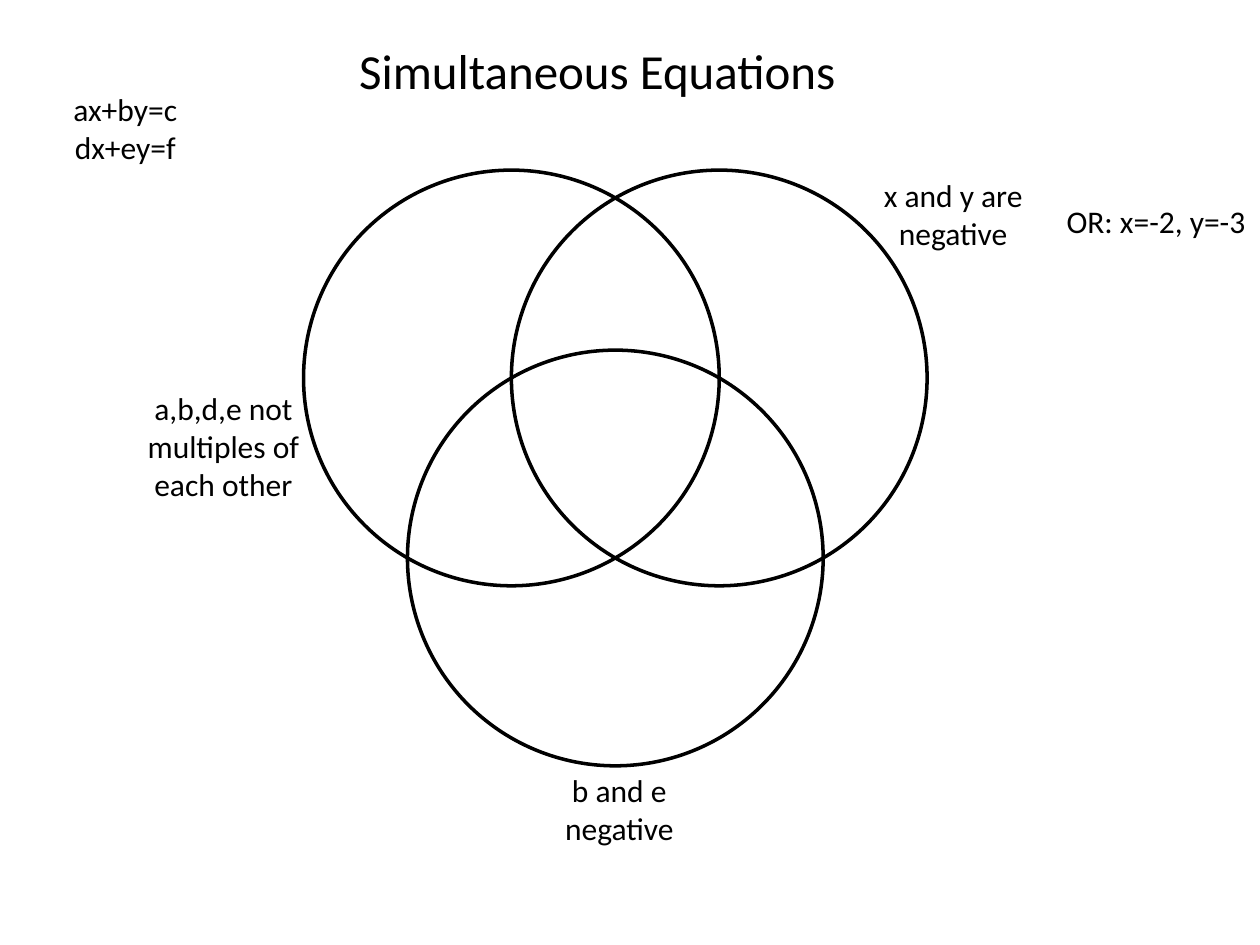
from dataclasses import dataclass
from math import sqrt

from pptx import Presentation
from pptx.dml.color import RGBColor
from pptx.enum.shapes import MSO_SHAPE as Shape
from pptx.enum.text import MSO_AUTO_SIZE as AutoSize, PP_ALIGN as Align
from pptx.util import Cm, Pt


@dataclass(frozen=True)
class Theme:
    ink: RGBColor = RGBColor(0, 0, 0)
    font: str = "Calibri"
    title_size: Pt = Pt(28)
    label_size: Pt = Pt(18)
    outline: Pt = Pt(2)


THEME = Theme()
LABEL_WIDTH = 3.99


def add_circle(shapes, left, top, diameter):
    circle = shapes.add_shape(
        Shape.OVAL, Cm(left), Cm(top), Cm(diameter), Cm(diameter))
    circle.shadow.inherit = False
    circle.fill.background()
    circle.line.color.rgb = THEME.ink
    circle.line.width = THEME.outline


def add_venn(slide, left, top, diameter):
    """Three circles whose centres form an equilateral triangle of side radius."""
    radius = diameter / 2
    group = slide.shapes.add_group_shape()
    for across, down in ((0, 0), (1, 0), (0.5, sqrt(3) / 2)):
        add_circle(group.shapes, left + across * radius,
                   top + down * radius, diameter)


def add_text(slide, lines, left, top, width, height,
             size=THEME.label_size, align=Align.CENTER, wrap=True):
    box = slide.shapes.add_textbox(Cm(left), Cm(top), Cm(width), Cm(height))
    frame = box.text_frame
    frame.word_wrap = wrap
    frame.auto_size = AutoSize.SHAPE_TO_FIT_TEXT
    for index, line in enumerate(lines):
        paragraph = frame.add_paragraph() if index else frame.paragraphs[0]
        paragraph.alignment = align
        run = paragraph.add_run()
        run.text = line
        run.font.name = THEME.font
        run.font.size = size
        run.font.color.rgb = THEME.ink


def main():
    presentation = Presentation()
    presentation.slide_width = Cm(25.4)
    presentation.slide_height = Cm(19.05)
    slide = presentation.slides.add_slide(presentation.slide_layouts[6])

    add_venn(slide, left=6.12, top=3.43, diameter=8.38)
    add_text(slide, ["a,b,d,e not multiples of each other"],
             2.51, 7.72, LABEL_WIDTH, 2.57)
    add_text(slide, ["x and y are negative"], 17.22, 3.43, LABEL_WIDTH, 1.8)
    add_text(slide, ["b and e negative"], 10.49, 15.42, LABEL_WIDTH, 1.8)
    add_text(slide, ["Simultaneous Equations"], 6.99, 0.69, 10.24, 1.45,
             size=THEME.title_size, align=Align.LEFT, wrap=False)
    add_text(slide, ["ax+by=c", "dx+ey=f"], 0.53, 1.7, LABEL_WIDTH, 1.8)
    add_text(slide, ["OR: x=-2, y=-3"], 21.21, 3.94, 4.19, 1.02)

    presentation.save("out.pptx")


if __name__ == "__main__":
    main()
